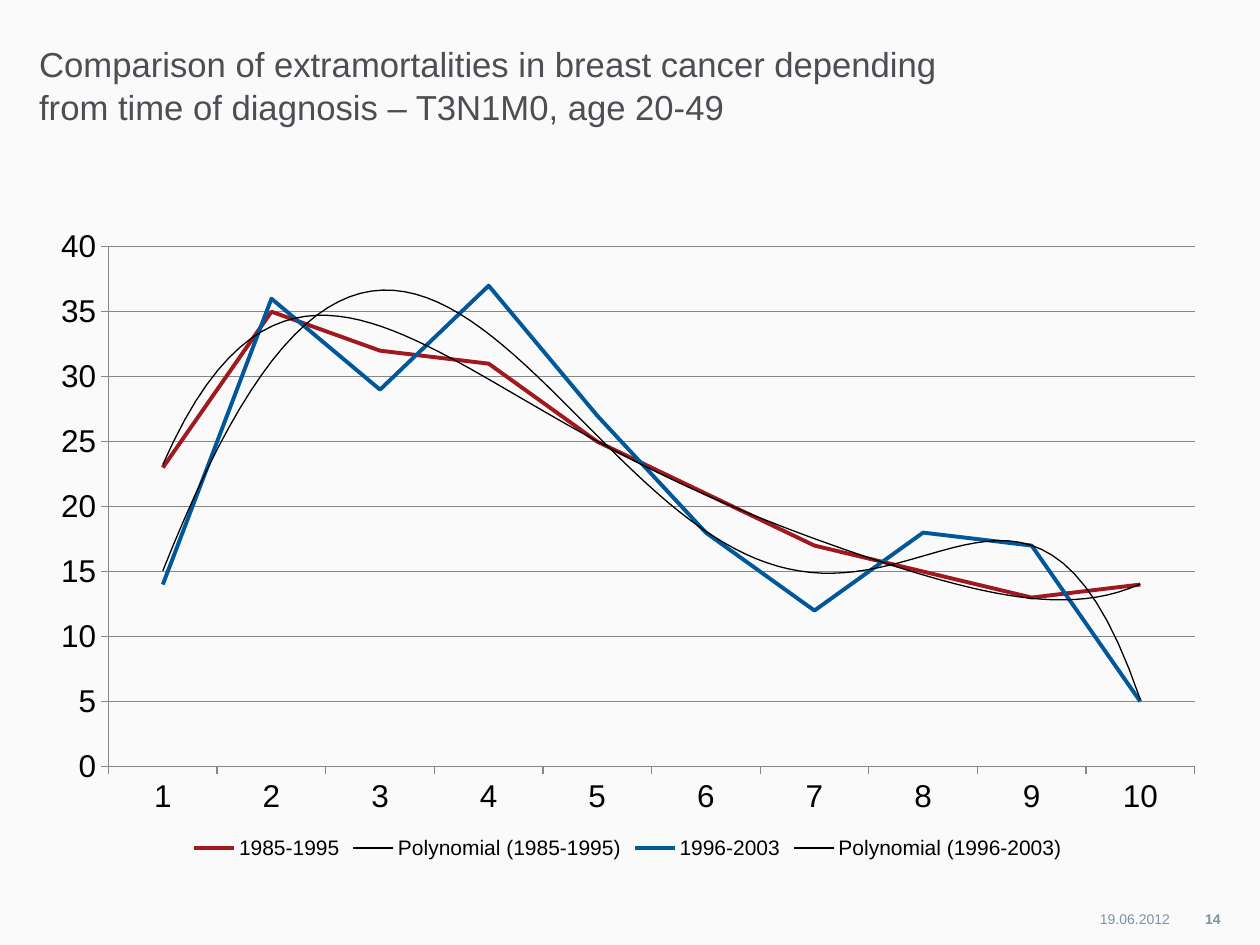
from dataclasses import dataclass

from lxml import etree
from pptx import Presentation
from pptx import util as u
from pptx.chart.data import CategoryChartData
from pptx.dml.color import RGBColor
from pptx.enum import chart as charts, text
from pptx.oxml.ns import qn


@dataclass(frozen=True)
class Theme:
    font: str = "Arial"
    background: str = "FAFAFA"
    title: str = "4D4E53"
    footer: str = "7A94A3"
    ink: str = "000000"
    grid: str = "878787"
    series: tuple = ("A0191E", "00589A")
    title_size: float = 19.8
    axis_size: float = 18
    legend_size: float = 12
    footer_size: float = 8
    series_width: float = 2.25
    thin_width: float = 0.75


THEME = Theme()

MORTALITY = {
    "1985-1995": (23, 35, 32, 31, 25, 21, 17, 15, 13, 14),
    "1996-2003": (14, 36, 29, 37, 27, 18, 12, 18, 17, 5),
}


def style_font(font, size, color, bold=False):
    font.name = THEME.font
    font.size = u.Pt(size)
    font.bold = bold
    font.color.rgb = RGBColor.from_string(color)


def style_line(line, color, width):
    line.color.rgb = RGBColor.from_string(color)
    line.width = u.Pt(width)


def add_text(slide, box, content, size, color, bold=False, right=0,
             align=text.PP_ALIGN.LEFT, anchor=text.MSO_ANCHOR.MIDDLE):
    frame = slide.shapes.add_textbox(*box).text_frame
    frame.word_wrap = True
    frame.vertical_anchor = anchor
    frame.margin_left = frame.margin_top = frame.margin_bottom = 0
    frame.margin_right = right
    paragraph = frame.paragraphs[0]
    paragraph.text = content
    paragraph.alignment = align
    style_font(paragraph.font, size, color, bold)
    return paragraph


def add_title(slide, box):
    paragraph = add_text(
        slide, box,
        "Comparison of extramortalities in breast cancer depending "
        "from time of diagnosis – T3N1M0, age 20-49",
        THEME.title_size, THEME.title, anchor=text.MSO_ANCHOR.TOP)
    paragraph.line_spacing = 1.03


def add_footer(slide, box):
    left, top, width, height = box
    date_width = u.Cm(2.31)
    add_text(slide, (left, top, date_width, height), "19.06.2012",
             THEME.footer_size, THEME.footer, align=text.PP_ALIGN.RIGHT)
    add_text(slide, (left + date_width, top, width - date_width, height), "14",
             THEME.footer_size, THEME.footer, bold=True, right=u.Cm(0.25),
             align=text.PP_ALIGN.RIGHT)


def add_polynomial_trend(series, order):
    trend = etree.Element(qn("c:trendline"))
    properties = etree.SubElement(trend, qn("c:spPr"))
    line = etree.SubElement(properties, qn("a:ln"), w=str(u.Pt(THEME.thin_width)))
    fill = etree.SubElement(line, qn("a:solidFill"))
    etree.SubElement(fill, qn("a:srgbClr"), val=THEME.ink)
    for tag, value in (("trendlineType", "poly"), ("order", order),
                       ("dispRSqr", 0), ("dispEq", 0)):
        etree.SubElement(trend, qn(f"c:{tag}"), val=str(value))
    series._element.find(qn("c:cat")).addprevious(trend)


def set_plot_layout(chart, x, y, w, h):
    plot_area = chart._chartSpace.chart.plotArea
    for old in plot_area.findall(qn("c:layout")):
        plot_area.remove(old)
    layout = etree.Element(qn("c:layout"))
    manual = etree.SubElement(layout, qn("c:manualLayout"))
    for tag, value in (("layoutTarget", "inner"), ("xMode", "edge"),
                       ("yMode", "edge"), ("x", x), ("y", y), ("w", w), ("h", h)):
        etree.SubElement(manual, qn(f"c:{tag}"), val=str(value))
    plot_area.insert(0, layout)


def add_mortality_chart(slide, box):
    data = CategoryChartData()
    data.categories = [str(year) for year in range(1, 11)]
    for name, values in MORTALITY.items():
        data.add_series(name, values)
    chart = slide.shapes.add_chart(charts.XL_CHART_TYPE.LINE, *box, data).chart
    chart.has_title = False
    style_font(chart.font, THEME.axis_size, THEME.ink)
    set_plot_layout(chart, 0.06, 0.05, 0.92, 0.8)

    chart.has_legend = True
    chart.legend.position = charts.XL_LEGEND_POSITION.BOTTOM
    chart.legend.include_in_layout = False
    style_font(chart.legend.font, THEME.legend_size, THEME.ink)

    for axis in (chart.category_axis, chart.value_axis):
        axis.major_tick_mark = charts.XL_TICK_MARK.OUTSIDE
        style_line(axis.format.line, THEME.grid, THEME.thin_width)
        style_font(axis.tick_labels.font, THEME.axis_size, THEME.ink)
    value_axis = chart.value_axis
    value_axis.minimum_scale, value_axis.maximum_scale = 0, 40
    value_axis.major_unit = 5
    value_axis.has_major_gridlines = True
    style_line(value_axis.major_gridlines.format.line, THEME.grid, THEME.thin_width)

    plot = chart.plots[0]
    plot.vary_by_categories = False
    for series, color in zip(plot.series, THEME.series):
        series.smooth = False
        series.marker.style = charts.XL_MARKER_STYLE.NONE
        style_line(series.format.line, color, THEME.series_width)
        add_polynomial_trend(series, 5)


def main():
    presentation = Presentation()
    presentation.slide_width, presentation.slide_height = u.Cm(25.4), u.Cm(19.05)
    slide = presentation.slides.add_slide(presentation.slide_layouts[6])
    background = slide.background.fill
    background.solid()
    background.fore_color.rgb = RGBColor.from_string(THEME.background)
    add_mortality_chart(slide, (u.Cm(0.76), u.Cm(4.32), u.Cm(23.8), u.Cm(13.1)))
    add_title(slide, (u.Cm(0.79), u.Cm(0.84), u.Cm(19), u.Cm(2)))
    add_footer(slide, (u.Cm(21.28), u.Cm(18.15), u.Cm(3.58), u.Cm(0.76)))
    presentation.save("out.pptx")


if __name__ == "__main__":
    main()
